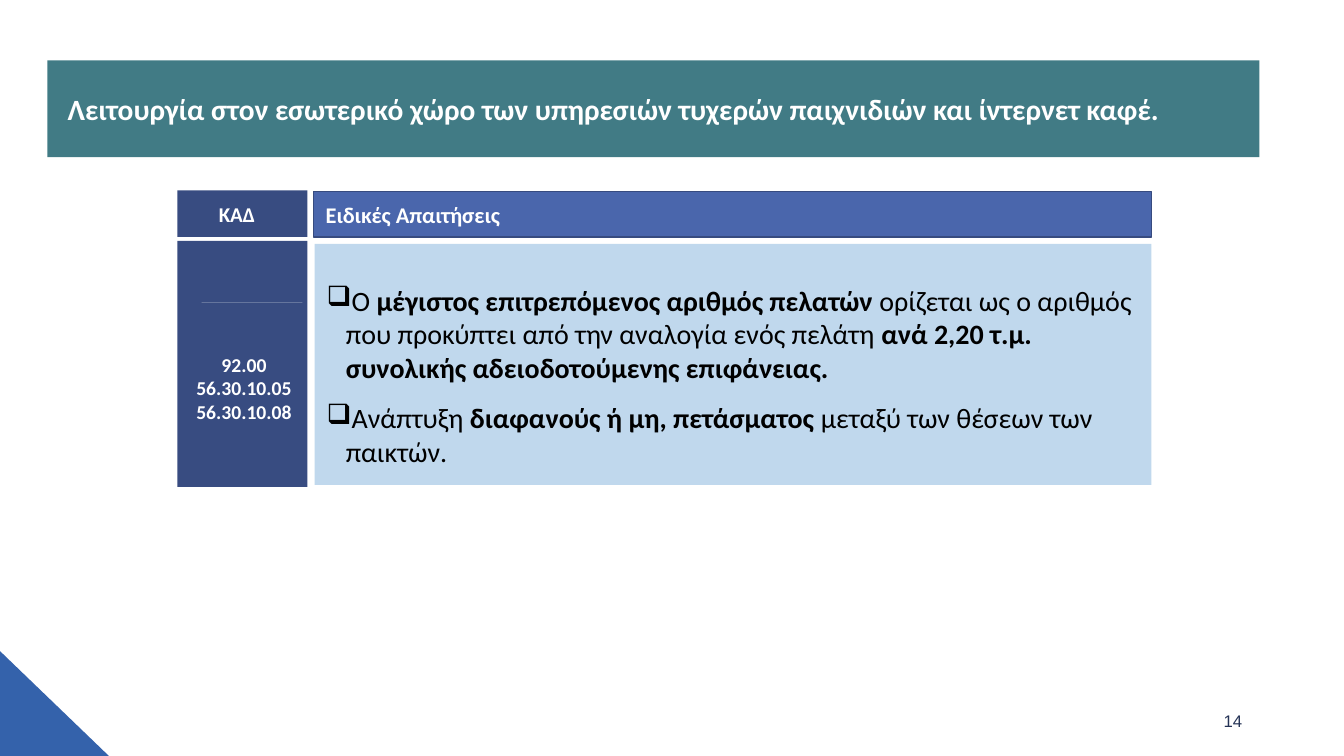
from dataclasses import dataclass
from lxml import etree
from pptx import Presentation
from pptx.dml.color import RGBColor
from pptx.enum import shapes, text
from pptx.oxml import ns
from pptx.util import Inches, Pt


@dataclass(frozen=True)
class Theme:
    white: str = "FFFFFF"
    black: str = "000000"
    teal: str = "417B85"
    navy: str = "384C81"
    edge: str = "374B7F"
    blue: str = "4A66AC"
    pale: str = "C0D8ED"
    wedge: str = "3462AB"
    page: str = "253356"
    font: str = "Calibri"
    plain: str = "Arial"
    title: int = 21
    body: int = 20
    head: int = 16
    label: int = 15
    code: int = 14
    small: int = 12


THEME = Theme()
TITLE = "Λειτουργία στον εσωτερικό χώρο των υπηρεσιών τυχερών παιχνιδιών και ίντερνετ καφέ."
LABEL = "ΚΑΔ"
HEAD = "Ειδικές Απαιτήσεις"
CODES = ["92.00", "56.30.10.05", "56.30.10.08"]
RULES = [
    [("Ο ", False),
     ("μέγιστος επιτρεπόμενος αριθμός πελατών ", True),
     ("ορίζεται ως ο αριθμός που προκύπτει από την αναλογία ενός πελάτη ", False),
     ("ανά 2,20 τ.μ. συνολικής αδειοδοτούμενης επιφάνειας.", True)],
    [("Ανάπτυξη ", False),
     ("διαφανούς ή μη, πετάσματος ", True),
     ("μεταξύ των θέσεων των παικτών.", False)],
]
PAGE = "14"


def frame(left, top, right, low):
    return [(left, top), (left, low), (right, low), (right, top)]


ICON = [
    [frame(2.09, 2.66, 2.72, 3.28), frame(2.11, 2.68, 2.69, 3.25)],
    [[(2.63, 3.08), (2.63, 2.78), (2.48, 2.78), (2.48, 2.8), (2.61, 2.8),
      (2.61, 3.08), (2.19, 3.08), (2.19, 2.8), (2.34, 2.8), (2.34, 2.78),
      (2.17, 2.78), (2.17, 3.08), (2.14, 3.08), (2.14, 3.16), (2.66, 3.16),
      (2.66, 3.08)],
     frame(2.16, 3.11, 2.64, 3.13)],
    [[(2.38, 2.86), (2.4, 2.86), (2.4, 2.83), (2.38, 2.82), (2.36, 2.81),
      (2.36, 2.78), (2.38, 2.76), (2.4, 2.75), (2.4, 2.74), (2.41, 2.74),
      (2.41, 2.75), (2.44, 2.76), (2.45, 2.79), (2.42, 2.79), (2.41, 2.77),
      (2.41, 2.81), (2.44, 2.81), (2.45, 2.83), (2.45, 2.86), (2.43, 2.88),
      (2.41, 2.88), (2.41, 2.9), (2.4, 2.9), (2.4, 2.88), (2.37, 2.87),
      (2.36, 2.84), (2.38, 2.84)],
     [(2.39, 2.78), (2.38, 2.79), (2.39, 2.8), (2.4, 2.8), (2.4, 2.77)],
     [(2.42, 2.86), (2.43, 2.85), (2.42, 2.83), (2.41, 2.83), (2.41, 2.86)]],
]


def paint(shape, fill, line=None):
    shape.fill.solid()
    shape.fill.fore_color.rgb = RGBColor.from_string(fill)
    if line:
        shape.line.color.rgb = RGBColor.from_string(line)
        shape.line.width = Pt(1)
    else:
        shape.line.fill.background()


def place(shape, box):
    shape.left, shape.top, shape.width, shape.height = map(Inches, box)


def block(slide, box, fill, line=None, kind=shapes.MSO_SHAPE.RECTANGLE):
    shape = slide.shapes.add_shape(kind, *map(Inches, box))
    shape.shadow.inherit = False
    paint(shape, fill, line)
    return shape


def write(shape, paras, size, ink, pad, align=text.PP_ALIGN.LEFT,
          anchor=text.MSO_ANCHOR.MIDDLE, font=THEME.font, mark=None):
    body = shape.text_frame
    body.word_wrap = True
    body.auto_size = text.MSO_AUTO_SIZE.NONE
    body.vertical_anchor = anchor
    (body.margin_left, body.margin_top,
     body.margin_right, body.margin_bottom) = map(Inches, pad)
    for row, runs in enumerate(paras):
        para = body.add_paragraph() if row else body.paragraphs[0]
        para.alignment = align
        if mark:
            props = para._p.get_or_add_pPr()
            props.set("marL", str(Inches(0.19)))
            props.set("indent", str(Inches(-0.19)))
            if row:
                para.space_before = Pt(12)
            etree.SubElement(props, ns.qn("a:buChar")).set("char", mark)
        for words, bold in runs:
            run = para.add_run()
            run.text = words
            run.font.name = font
            run.font.size = Pt(size)
            run.font.bold = bold
            run.font.color.rgb = RGBColor.from_string(ink)


def draw_icon(slide):
    group = slide.shapes.add_group_shape()
    for loops in ICON:
        pen = group.shapes.build_freeform(*loops[0][0], scale=Inches(1))
        for turn, loop in enumerate(loops):
            if turn:
                pen.move_to(*loop[0])
            pen.add_line_segments(loop[1:], close=True)
        part = pen.convert_to_shape()
        part.shadow.inherit = False
        paint(part, THEME.white)


def main():
    deck = Presentation()
    deck.slide_width, deck.slide_height = Inches(13.33), Inches(7.5)
    slide = deck.slides.add_slide(deck.slide_layouts[5])

    title = slide.shapes.title
    place(title, (0.47, 0.6, 12.02, 0.96))
    shape_props = title._element.spPr
    form = etree.Element(ns.qn("a:prstGeom"), prst="snip2DiagRect")
    etree.SubElement(form, ns.qn("a:avLst"))
    shape_props.insert(1, form)
    paint(title, THEME.teal)
    write(title, [[(TITLE, True)]], THEME.title, THEME.white,
          (0.2, 0.02, 0.12, 0.02))

    block(slide, (0, 6.46, 1.08, 1.04), THEME.wedge,
          kind=shapes.MSO_SHAPE.RIGHT_TRIANGLE)
    page = slide.shapes.add_textbox(*map(Inches, (9.42, 6.95, 3, 0.4)))
    write(page, [[(PAGE, False)]], THEME.small, THEME.page,
          (0.1, 0.05, 0.1, 0.05), text.PP_ALIGN.RIGHT, font=THEME.plain)

    label = block(slide, (1.76, 1.89, 1.29, 0.46), THEME.navy)
    write(label, [[(LABEL, True)]], THEME.label, THEME.white,
          (0.41, 0.06, 0.06, 0.06))
    head = block(slide, (3.11, 1.9, 8.31, 0.45), THEME.blue, THEME.edge)
    write(head, [[(HEAD, True)]], THEME.head, THEME.white,
          (0.12, 0.06, 0.08, 0.06))
    codes = block(slide, (1.76, 2.39, 1.29, 2.44), THEME.navy)
    write(codes, [[(code, True)] for code in CODES], THEME.code, THEME.white,
          (0.09, 1.11, 0.06, 0.06), text.PP_ALIGN.CENTER, text.MSO_ANCHOR.TOP)
    rules = block(slide, (3.12, 2.42, 8.3, 2.39), THEME.pale)
    write(rules, RULES, THEME.body, THEME.black, (0.12, 0.39, 0.08, 0.06),
          anchor=text.MSO_ANCHOR.TOP, mark="❑")
    draw_icon(slide)
    deck.save("out.pptx")


if __name__ == "__main__":
    main()
